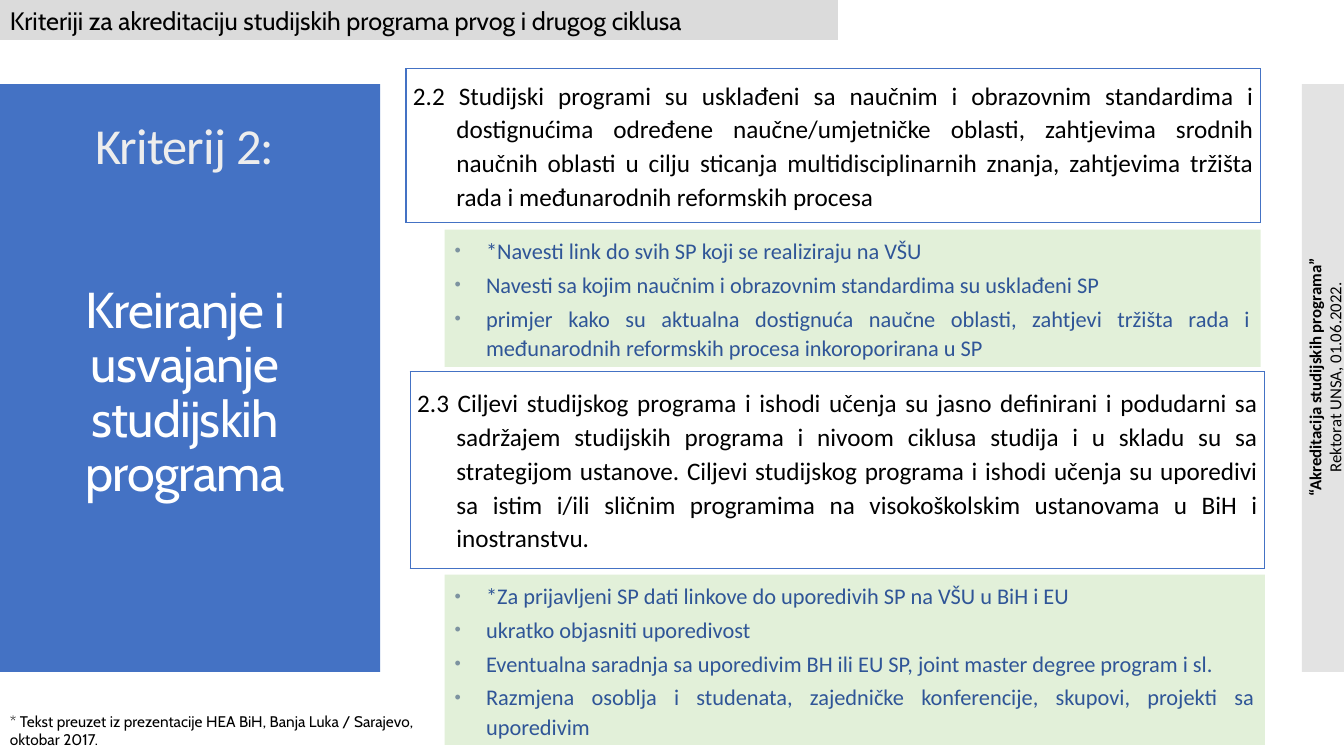
"""Builds the slide on criterion 2 for accrediting study programmes."""
from dataclasses import dataclass

from lxml import etree
from pptx import Presentation
from pptx.dml.color import RGBColor
from pptx.enum.shapes import MSO_SHAPE
from pptx.enum.text import MSO_ANCHOR, MSO_AUTO_SIZE, PP_ALIGN
from pptx.oxml.ns import qn
from pptx.util import Pt

RECTANGLE = MSO_SHAPE.RECTANGLE
TOP, MIDDLE = MSO_ANCHOR.TOP, MSO_ANCHOR.MIDDLE
NO_AUTOFIT = MSO_AUTO_SIZE.NONE
LEFT, CENTER, JUSTIFY = PP_ALIGN.LEFT, PP_ALIGN.CENTER, PP_ALIGN.JUSTIFY


@dataclass(frozen=True)
class Theme:
    """Colours, fonts and type sizes of the slide."""
    accent: str = "4472C4"
    strip: str = "C8C8C8"
    header: str = "DBDBDB"
    guidance_fill: str = "E2F0D9"
    guidance_text: str = "2F5597"
    bullet: str = "7D93A0"
    label: str = "EDEDED"
    white: str = "FFFFFF"
    black: str = "000000"
    heading_font: str = "Cabin"
    body_font: str = "Calibri"
    title_size: float = 36
    text_size: float = 18
    guidance_size: float = 16
    event_size: float = 12
    source_size: float = 11


class SlideBuilder:
    """Draws styled elements on one slide."""

    def __init__(self, slide, theme):
        self.slide = slide
        self.theme = theme

    def place(self, shape, box):
        shape.left, shape.top, shape.width, shape.height = map(Pt, box)

    def paint(self, shape, color):
        shape.fill.solid()
        shape.fill.fore_color.rgb = RGBColor.from_string(color)

    def run(self, paragraph, text, size, color, font, bold=False):
        run = paragraph.add_run()
        run.text = text
        run.font.size = Pt(size)
        run.font.name = font
        run.font.bold = bold
        run.font.color.rgb = RGBColor.from_string(color)
        return run

    def paragraph(self, frame, index, align, spacing=1.0, before=0, after=0):
        paragraph = frame.add_paragraph() if index else frame.paragraphs[0]
        paragraph.alignment = align
        paragraph.line_spacing = spacing
        paragraph.space_before = Pt(before)
        paragraph.space_after = Pt(after)
        return paragraph

    def hang(self, paragraph, margin, indent):
        properties = paragraph._p.get_or_add_pPr()
        properties.set("marL", str(Pt(margin)))
        properties.set("indent", str(Pt(indent)))
        return properties

    def panel(self, box, color, opacity=None):
        panel = self.slide.shapes.add_shape(RECTANGLE, *map(Pt, box))
        panel.shadow.inherit = False
        panel.line.fill.background()
        self.paint(panel, color)
        if opacity:
            tint = panel._element.spPr.find(".//" + qn("a:srgbClr"))
            etree.SubElement(tint, qn("a:alpha"), val=str(opacity * 1000))
        return panel

    def backdrop(self, box, color, opacity=None):
        panel = self.panel(box, color, opacity)
        self.slide.shapes._spTree.insert(2, panel._element)

    def title(self, box, label, heading):
        theme = self.theme
        title = self.slide.shapes.title
        self.place(title, box)
        frame = title.text_frame
        frame.auto_size = NO_AUTOFIT
        frame.vertical_anchor = TOP
        parts = ((label, theme.label, theme.body_font, 78),
                 (heading, theme.white, theme.heading_font, 0))
        for index, (text, color, font, after) in enumerate(parts):
            paragraph = self.paragraph(frame, index, CENTER, 0.9, after=after)
            run = self.run(paragraph, text, theme.title_size, color, font)
            run.font._element.set("spc", "-60")

    def guidance(self, position, box, items):
        theme = self.theme
        body = self.slide.placeholders[position]
        self.place(body, box)
        self.paint(body, theme.guidance_fill)
        frame = body.text_frame
        frame.auto_size = NO_AUTOFIT
        frame.vertical_anchor = TOP
        for index, item in enumerate(items):
            paragraph = self.paragraph(frame, index, JUSTIFY, 1.1, before=3)
            properties = self.hang(paragraph, 22.5, -22.5)
            tint = etree.SubElement(properties, qn("a:buClr"))
            etree.SubElement(tint, qn("a:srgbClr"), val=theme.bullet)
            etree.SubElement(properties, qn("a:buSzPct"), val="80000")
            etree.SubElement(properties, qn("a:buFont"), typeface="Arial")
            etree.SubElement(properties, qn("a:buChar"), char="•")
            self.run(paragraph, item, theme.guidance_size, theme.guidance_text,
                     theme.body_font)

    def criterion(self, box, text, margin, indent, gap):
        theme = self.theme
        table = self.slide.shapes.add_table(1, 1, *map(Pt, box)).table
        table.first_row = table.horz_banding = False
        cell = table.cell(0, 0)
        cell.margin_left = cell.margin_right = Pt(5)
        cell.margin_top = cell.margin_bottom = 0
        cell.vertical_anchor = MIDDLE
        properties = cell._tc.get_or_add_tcPr()
        for side in ("a:lnL", "a:lnR", "a:lnT", "a:lnB"):
            border = etree.SubElement(properties, qn(side), w=str(Pt(1)))
            fill = etree.SubElement(border, qn("a:solidFill"))
            etree.SubElement(fill, qn("a:srgbClr"), val=theme.accent)
        cell.fill.background()
        paragraph = self.paragraph(cell.text_frame, 0, JUSTIFY, 1.1, gap, gap)
        self.hang(paragraph, margin, indent)
        self.run(paragraph, text, theme.text_size, theme.black, theme.body_font)

    def header(self, box, text):
        theme = self.theme
        frame = self.panel(box, theme.header).text_frame
        frame.word_wrap = True
        frame.vertical_anchor = MIDDLE
        paragraph = self.paragraph(frame, 0, LEFT)
        self.run(paragraph, text, theme.text_size, theme.black, theme.heading_font)

    def caption(self, box, lines, size, font, align=LEFT, rotation=0):
        caption = self.slide.shapes.add_textbox(*map(Pt, box))
        caption.rotation = rotation
        frame = caption.text_frame
        frame.word_wrap = True
        for index, (text, bold) in enumerate(lines):
            paragraph = self.paragraph(frame, index, align)
            self.run(paragraph, text, size, self.theme.black, font, bold)


def main():
    theme = Theme()
    deck = Presentation()
    deck.slide_width, deck.slide_height = Pt(960), Pt(540)
    page = SlideBuilder(deck.slides.add_slide(deck.slide_layouts[3]), theme)

    page.backdrop((930, 60, 30, 420), theme.strip, 50)
    page.backdrop((0, 60, 271.5, 420), theme.accent)
    page.title((16, 83, 232, 362), "Kriterij 2:", "Kreiranje i usvajanje studijskih programa")
    page.header((0, 0, 598.5, 28.5),
                "Kriteriji za akreditaciju studijskih programa prvog i drugog ciklusa")
    page.criterion(
        (290, 49, 610.5, 110),
        "2.2 Studijski programi su usklađeni sa naučnim i obrazovnim standardima i "
        "dostignućima određene naučne/umjetničke oblasti, zahtjevima srodnih naučnih "
        "oblasti u cilju sticanja multidisciplinarnih znanja, zahtjevima tržišta rada "
        "i međunarodnih reformskih procesa", 31, -34.5, 12)
    page.guidance(1, (317.5, 164, 583, 98), (
        "*Navesti link do svih SP koji se realiziraju na VŠU",
        "Navesti sa kojim naučnim i obrazovnim standardima su usklađeni SP",
        "primjer kako su aktualna dostignuća naučne oblasti, zahtjevi tržišta rada i "
        "međunarodnih reformskih procesa inkoroporirana u SP"))
    page.criterion(
        (293, 265.5, 610.5, 140.5),
        "2.3 Ciljevi studijskog programa i ishodi učenja su jasno definirani i podudarni "
        "sa sadržajem studijskih programa i nivoom ciklusa studija i u skladu su sa "
        "strategijom ustanove. Ciljevi studijskog programa i ishodi učenja su uporedivi "
        "sa istim i/ili sličnim programima na visokoškolskim ustanovama u BiH i "
        "inostranstvu.", 28, -28, 6)
    page.guidance(2, (317.5, 410.5, 586, 121.5), (
        "*Za prijavljeni SP dati linkove do uporedivih SP na VŠU u BiH i EU",
        "ukratko objasniti uporedivost",
        "Eventualna saradnja sa uporedivim BH ili EU SP, joint master degree program i sl.",
        "Razmjena osoblja i studenata, zajedničke konferencije, skupovi, projekti sa "
        "uporedivim"))
    page.caption((800.5, 251.5, 291.5, 36),
                 (("“Akreditacija studijskih programa”", True),
                  ("Rektorat UNSA, 01.06.2022.", False)),
                 theme.event_size, theme.body_font, CENTER, 270)
    page.caption((0, 505, 307, 34),
                 (("* Tekst preuzet iz prezentacije HEA BiH, Banja Luka / Sarajevo, "
                   "oktobar 2017.", False),),
                 theme.source_size, theme.heading_font)
    deck.save("out.pptx")


if __name__ == "__main__":
    main()
